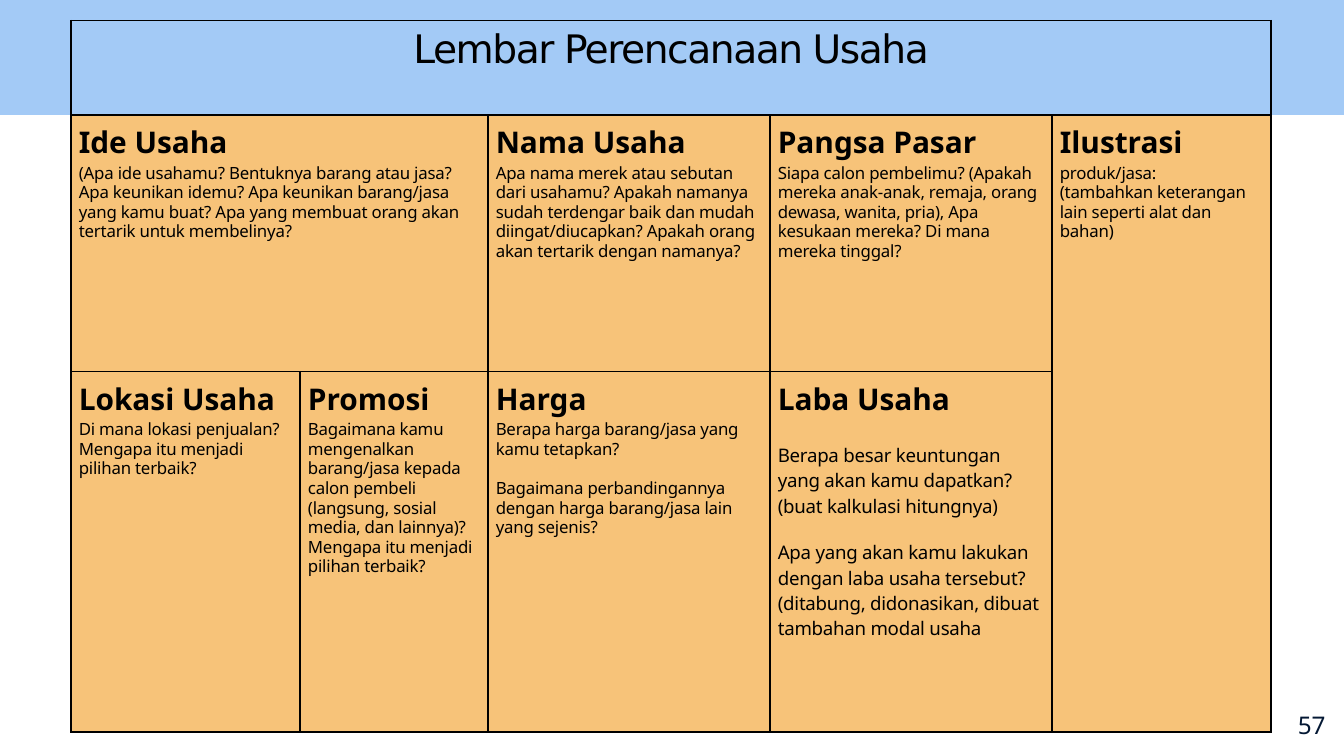
"""Build the business planning sheet slide."""
import copy

import lxml.etree
import pptx
import pptx.dml.color
import pptx.enum.shapes
import pptx.enum.text
import pptx.oxml.ns
import pptx.util

Cm = pptx.util.Cm
Pt = pptx.util.Pt
qn = pptx.oxml.ns.qn
BLUE = "A3CAF6"
SAND = "F7C379"


def tint(text):
    return pptx.dml.color.RGBColor.from_string(text)


def write(para, text, size=9, font="Noto Sans", color="000000", bold=False,
          track=0, before=0, line=None, align=pptx.enum.text.PP_ALIGN.LEFT):
    para.text = text.replace("\n", "\v")
    para.alignment = align
    para.space_before = Pt(before)
    if line:
        para.line_spacing = Pt(line)
    for run in para.runs:
        run.font.size = Pt(size)
        run.font.name = font
        run.font.bold = bold
        run.font.color.rgb = tint(color)
        run.font._element.set("spc", str(round(track * 100)))
    for gap in para._p.findall(qn("a:br")):
        gap.append(copy.deepcopy(para.runs[0].font._element))


deck = pptx.Presentation()
deck.slide_width = Cm(25.4)
deck.slide_height = Cm(14.28)
slide = deck.slides.add_slide(deck.slide_layouts[6])

band = slide.shapes.add_shape(
    pptx.enum.shapes.MSO_SHAPE.RECTANGLE, 0, 0, deck.slide_width, Cm(2.17))
band.shadow.inherit = False
band.fill.solid()
band.fill.fore_color.rgb = tint(BLUE)
band.line.fill.background()

wide = [4.33, 3.55, 5.33, 5.33, 4.14]
high = [1.78, 4.85, 6.81]
frame = slide.shapes.add_table(
    len(high), len(wide), Cm(1.34), Cm(0.39), Cm(sum(wide)), Cm(sum(high)))
table = frame.table
table.first_row = False
table.horz_banding = False
for col, size in zip(table.columns, wide):
    col.width = Cm(size)
for row, size in zip(table.rows, high):
    row.height = Cm(size)

for r in range(len(high)):
    for c in range(len(wide)):
        cell = table.cell(r, c)
        cell.margin_left = Cm(0.15) if r else 0
        cell.margin_right = cell.margin_bottom = 0
        cell.margin_top = Cm(0.13)
        props = cell._tc.get_or_add_tcPr()
        for side in ("a:lnL", "a:lnR", "a:lnT", "a:lnB"):
            edge = lxml.etree.SubElement(props, qn(side), w=str(Pt(1)))
            fill = lxml.etree.SubElement(edge, qn("a:solidFill"))
            lxml.etree.SubElement(fill, qn("a:srgbClr"), val="000000")
        cell.fill.solid()
        cell.fill.fore_color.rgb = tint(SAND if r else BLUE)

for start, end in (((0, 0), (0, 4)), ((1, 0), (1, 1)), ((1, 4), (2, 4))):
    table.cell(*start).merge(table.cell(*end))

write(table.cell(0, 0).text_frame.paragraphs[0], "Lembar Perencanaan Usaha",
      size=21, font="DejaVu Sans", track=-0.8, before=3.6,
      align=pptx.enum.text.PP_ALIGN.CENTER)

tight = {"size": 9, "line": 10.5, "track": -0.1}
loose = {"size": 10, "track": -0.1}
parts = [
    (1, 0, "Ide Usaha", tight, [
        (1.1, "(Apa ide usahamu? Bentuknya barang atau jasa?\n"
              "Apa keunikan idemu? Apa keunikan barang/jasa\n"
              "yang kamu buat? Apa yang membuat orang akan\n"
              "tertarik untuk membelinya?")]),
    (1, 2, "Nama Usaha", tight, [
        (1.1, "Apa nama merek atau sebutan\ndari usahamu? Apakah namanya\n"
              "sudah terdengar baik dan mudah\ndiingat/diucapkan? Apakah orang\n"
              "akan tertarik dengan namanya?")]),
    (1, 3, "Pangsa Pasar", tight, [
        (1.1, "Siapa calon pembelimu? (Apakah\nmereka anak-anak, remaja, orang\n"
              "dewasa, wanita, pria), Apa\nkesukaan mereka? Di mana\n"
              "mereka tinggal?")]),
    (1, 4, "Ilustrasi", tight, [
        (1.1, "produk/jasa:\n(tambahkan keterangan\nlain seperti alat dan\nbahan)")]),
    (2, 0, "Lokasi Usaha", tight, [
        (1.1, "Di mana lokasi penjualan?\nMengapa itu menjadi\npilihan terbaik?")]),
    (2, 1, "Promosi", tight, [
        (1.1, "Bagaimana kamu\nmengenalkan\nbarang/jasa kepada\ncalon pembeli\n"
              "(langsung, sosial\nmedia, dan lainnya)?\nMengapa itu menjadi\n"
              "pilihan terbaik?")]),
    (2, 2, "Harga", tight, [
        (1.1, "Berapa harga barang/jasa yang\nkamu tetapkan?"),
        (10.5, "Bagaimana perbandingannya\ndengan harga barang/jasa lain\n"
               "yang sejenis?")]),
    (2, 3, "Laba Usaha", loose, [
        (12.6, "Berapa besar keuntungan\nyang akan kamu dapatkan?\n"
               "(buat kalkulasi hitungnya)"),
        (11.3, "Apa yang akan kamu lakukan\ndengan laba usaha tersebut?\n"
               "(ditabung, didonasikan, dibuat\ntambahan modal usaha")]),
]
for r, c, head, style, body in parts:
    text = table.cell(r, c).text_frame
    write(text.paragraphs[0], head, size=16, bold=True, before=3.9)
    for before, words in body:
        write(text.add_paragraph(), words, before=before, **style)

page = slide.shapes.add_textbox(Cm(24.43), Cm(13.34), Cm(0.74), Cm(0.69))
text = page.text_frame
text.word_wrap = True
text.margin_left = Cm(0.1)
text.margin_top = Cm(0.08)
text.margin_right = text.margin_bottom = 0
write(text.paragraphs[0], "57", size=13, color="041834", before=1.9)

deck.save("out.pptx")
